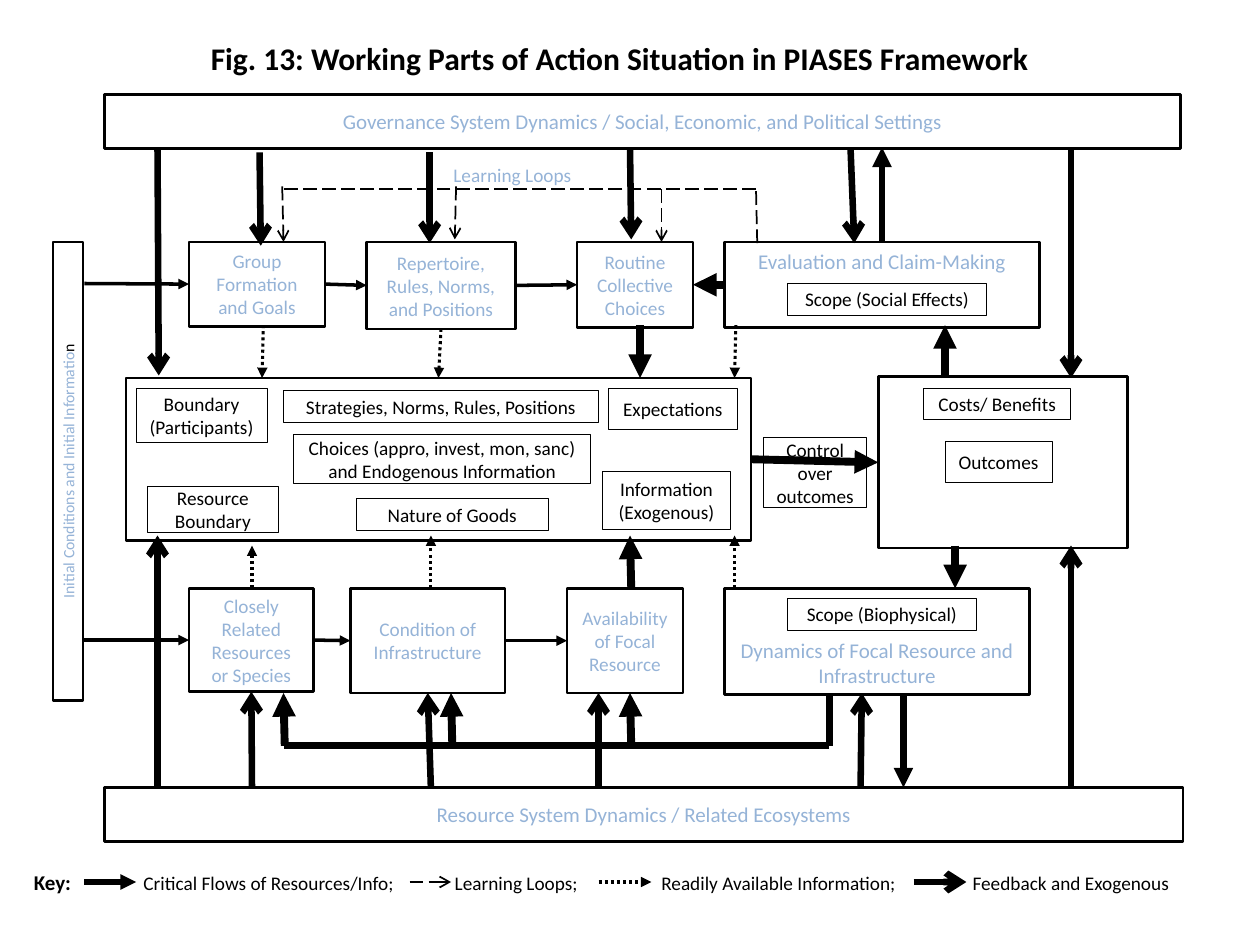
import lxml.etree
import pptx
import pptx.dml.color
import pptx.enum.dml
import pptx.enum.shapes
import pptx.enum.text
import pptx.oxml.ns
import pptx.util

Inches = pptx.util.Inches
ANCHOR = pptx.enum.text.MSO_ANCHOR
ALIGN = pptx.enum.text.PP_ALIGN
DASH = pptx.enum.dml.MSO_LINE

COLORS = {"ink": "000000", "muted": "95B3D7"}
TOP, BOTTOM, LEFT, RIGHT = 0, 2, 1, 3

# flow: width in points, dash, arrowhead
FLOWS = {
    "critical": (4.5, None, "triangle"),
    "output": (3.75, None, "triangle"),
    "key critical": (3, None, "triangle"),
    "sequence": (2, None, "triangle"),
    "return": (4, None, None),
    "loop": (1, DASH.LONG_DASH, "arrow"),
    "loop rail": (1, DASH.LONG_DASH, None),
    "information": (1.75, DASH.ROUND_DOT, "triangle"),
    "feedback": (3.75, None, "arrow"),
}


def rgb(name):
    return pptx.dml.color.RGBColor.from_string(COLORS[name])


def add_xml(parent, tag, **attributes):
    return lxml.etree.SubElement(parent, pptx.oxml.ns.qn(tag), attributes)


class Diagram:
    font = "Calibri"

    def __init__(self, slide):
        self.slide = slide

    def format_run(self, run, size, color="ink", bold=False):
        run.font.name = self.font
        run.font.size = pptx.util.Pt(size)
        run.font.bold = bold
        run.font.color.rgb = rgb(color)

    def title(self, text, left, top, width, height):
        title = self.slide.shapes.title
        title.left, title.top = Inches(left), Inches(top)
        title.width, title.height = Inches(width), Inches(height)
        frame = title.text_frame
        frame.text = text
        frame.auto_size = pptx.enum.text.MSO_AUTO_SIZE.NONE
        frame.vertical_anchor = ANCHOR.MIDDLE
        frame.paragraphs[0].alignment = ALIGN.CENTER
        self.format_run(frame.paragraphs[0].runs[0], 18, bold=True)

    def box(self, text, left, top, width, height, size=11, color="muted",
            line=1.5, anchor=ANCHOR.MIDDLE):
        box = self.slide.shapes.add_shape(
            pptx.enum.shapes.MSO_SHAPE.RECTANGLE,
            Inches(left), Inches(top), Inches(width), Inches(height))
        box.shadow.inherit = False
        box.fill.background()
        box.line.color.rgb = rgb("ink")
        box.line.width = pptx.util.Pt(line)
        frame = box.text_frame
        frame.text = text
        frame.word_wrap = True
        frame.vertical_anchor = anchor
        paragraph = frame.paragraphs[0]
        paragraph.alignment = ALIGN.CENTER
        for run in paragraph.runs:
            self.format_run(run, size, color)
        return box

    def label(self, text, left, top, width, height, color="ink", tabs=()):
        """Add left-aligned text; tabs are stops in inches from its start."""
        label = self.slide.shapes.add_textbox(
            Inches(left), Inches(top), Inches(width), Inches(height))
        frame = label.text_frame
        frame.word_wrap = True
        paragraph = frame.paragraphs[0]
        paragraph.text = text
        self.format_run(paragraph.runs[0], 11, color)
        if tabs:
            stops = add_xml(paragraph._p.get_or_add_pPr(), "a:tabLst")
            for stop in tabs:
                add_xml(stops, "a:tab", pos=str(Inches(stop)), algn="l")
        return label

    def flow(self, kind, start, end):
        """Draw a line; each end is (x, y) in inches or (box, side)."""
        width, dash, head = FLOWS[kind]
        joined = [not isinstance(point[0], (int, float)) for point in (start, end)]
        places = [(0, 0) if join else point
                  for join, point in zip(joined, (start, end))]
        line = self.slide.shapes.add_connector(
            pptx.enum.shapes.MSO_CONNECTOR.STRAIGHT,
            *[Inches(value) for point in places for value in point])
        if joined[0]:
            line.begin_connect(*start)
        if joined[1]:
            line.end_connect(*end)
        line.line.color.rgb = rgb("ink")
        line.line.width = pptx.util.Pt(width)
        if dash:
            line.line.dash_style = dash
        if head:
            add_xml(line.line._ln, "a:tailEnd", type=head)
        add_xml(line._element.spPr, "a:effectLst")


def main():
    deck = pptx.Presentation()
    deck.slide_width, deck.slide_height = Inches(10), Inches(7.5)
    diagram = Diagram(deck.slides.add_slide(deck.slide_layouts[5]))
    diagram.title("Fig. 13: Working Parts of Action Situation in PIASES Framework",
                  0.42, 0.25, 9, 0.42)

    # System settings and the two rows of processes
    diagram.box("Governance System Dynamics / Social, Economic, and Political Settings",
                0.83, 0.75, 8.54, 0.43, size=12)
    diagram.box("Resource System Dynamics / Related Ecosystems",
                0.83, 6.25, 8.56, 0.43, size=12)
    group = diagram.box("Group Formation and Goals", 1.5, 1.92, 1.08, 0.67)
    repertoire = diagram.box("Repertoire, Rules, Norms, and Positions",
                             2.91, 1.92, 1.18, 0.69)
    routine = diagram.box("Routine Collective Choices", 4.58, 1.92, 0.92, 0.68)
    evaluation = diagram.box("Evaluation and Claim-Making", 5.75, 1.92, 2.5, 0.68,
                             size=12, anchor=ANCHOR.TOP)
    related = diagram.box("Closely Related Resources or Species", 1.5, 4.67, 0.99, 0.82)
    condition = diagram.box("Condition of Infrastructure", 2.78, 4.67, 1.23, 0.83)
    availability = diagram.box("Availability of Focal Resource", 4.5, 4.67, 0.92, 0.83)
    diagram.box("Dynamics of Focal Resource and Infrastructure",
                5.75, 4.67, 2.42, 0.84, size=12, anchor=ANCHOR.BOTTOM)

    initial = diagram.box("Initial Conditions and Initial Informatio",
                          0.42, 1.92, 0.24, 3.64, size=9)
    initial.text_frame._txBody.bodyPr.set("vert", "vert270")
    last_letter = initial.text_frame.paragraphs[0].add_run()
    last_letter.text = "n"
    diagram.format_run(last_letter, 9)

    # Action situation, outcomes and their parts
    situation = diagram.box("", 1, 3, 4.96, 1.29)
    outcomes = diagram.box("", 6.97, 2.99, 1.98, 1.36)
    for text, *place in (
        ("Boundary (Participants)", 1.08, 3.08, 1.04, 0.43),
        ("Resource Boundary", 1.17, 3.86, 1.04, 0.37),
        ("Strategies, Norms, Rules, Positions", 2.25, 3.1, 2.5, 0.25),
        ("Choices (appro, invest, mon, sanc) and Endogenous Information",
         2.33, 3.45, 2.36, 0.39),
        ("Nature of Goods", 2.83, 3.96, 1.52, 0.25),
        ("Expectations", 4.83, 3.08, 1.02, 0.33),
        ("Information (Exogenous)", 4.78, 3.74, 1.02, 0.46),
        ("Control over outcomes", 6.06, 3.47, 0.82, 0.56),
        ("Costs/ Benefits", 7.33, 3.08, 1.17, 0.25),
        ("Outcomes", 7.5, 3.5, 0.85, 0.33),
        ("Scope (Social Effects)", 6.25, 2.25, 1.58, 0.25),
        ("Scope (Biophysical)", 6.25, 4.75, 1.5, 0.25),
    ):
        diagram.box(text, *place, color="ink", line=0.5)

    diagram.label("Learning Loops", 3.5, 1.25, 1.25, 0.29, color="muted")
    key = diagram.label("Key:", 0.17, 6.85, 9.25, 0.3, tabs=(0.87, 3.34, 4.98, 7.45))
    key_line = key.text_frame.paragraphs[0]
    diagram.format_run(key_line.runs[0], 12, bold=True)
    meanings = key_line.add_run()
    meanings.text = ("\tCritical Flows of Resources/Info;\tLearning Loops;"
                     "\tReadily Available Information;\tFeedback and Exogenous")
    diagram.format_run(meanings, 11)

    flows = {
        "critical": [
            ((7.5, 3), (7.5, 2.58)), ((7.58, 4.33), (7.58, 4.67)),
            ((evaluation, LEFT), (routine, RIGHT)),
            ((5.08, 2.58), (5.08, 3)), ((5.01, 4.67), (5, 4.25)),
            ((situation, RIGHT), (outcomes, LEFT)),
            *[((x + 0.01, 5.92), (x, 5.5)) for x in (2.25, 3.58, 5)]],
        "return": [((6.58, 5.92), (2.25, 5.92)), ((6.58, 5.92), (6.58, 5.5))],
        "output": [((evaluation, TOP), (7, 1.17)), ((7.17, 5.5), (7.17, 6.25))],
        "sequence": [
            ((0.67, 2.25), (group, LEFT)), ((0.67, 5.08), (related, LEFT)),
            *[((source, RIGHT), (target, LEFT)) for source, target in (
                (group, repertoire), (repertoire, routine),
                (related, condition), (condition, availability))]],
        "loop rail": [((6.01, 1.93), (6, 1.5)), ((6, 1.5), (2.25, 1.5))],
        "loop": [((2.24, 1.48), (2.25, 1.92)), ((3.62, 1.48), (3.61, 1.9)),
                 ((5.25, 1.5), (5.25, 1.92)), ((3.25, 7), (3.58, 7))],
        "information": [
            ((2.09, 2.58), (2.08, 3)), ((repertoire, BOTTOM), (situation, TOP)),
            ((5.84, 2.58), (5.83, 3)), ((2, 4.67), (2, 4.33)),
            ((3.42, 4.67), (3.42, 4.25)), ((5.83, 4.67), (5.83, 4.25)),
            ((4.75, 7), (5.17, 7))],
        "feedback": [
            ((1.25, 1.17), (1.26, 2.98)), ((2.06, 1.21), (2.07, 1.95)),
            ((3.41, 1.21), (3.41, 1.93)), ((5, 1.17), (5.01, 1.9)),
            ((6.75, 1.17), (6.78, 1.93)), ((8.5, 1.17), (8.5, 3)),
            ((1.25, 6.25), (1.25, 4.25)), ((2, 6.25), (related, BOTTOM)),
            ((3.42, 6.25), (condition, BOTTOM)), ((4.75, 6.25), (4.75, 5.5)),
            ((6.83, 6.25), (6.84, 5.5)), ((8.5, 6.25), (8.5, 4.33)),
            ((7.25, 7), (7.67, 7))],
        "key critical": [((0.67, 7), (1.08, 7))],
    }
    for kind, ends in flows.items():
        for start, end in ends:
            diagram.flow(kind, start, end)

    deck.save("out.pptx")


if __name__ == "__main__":
    main()
